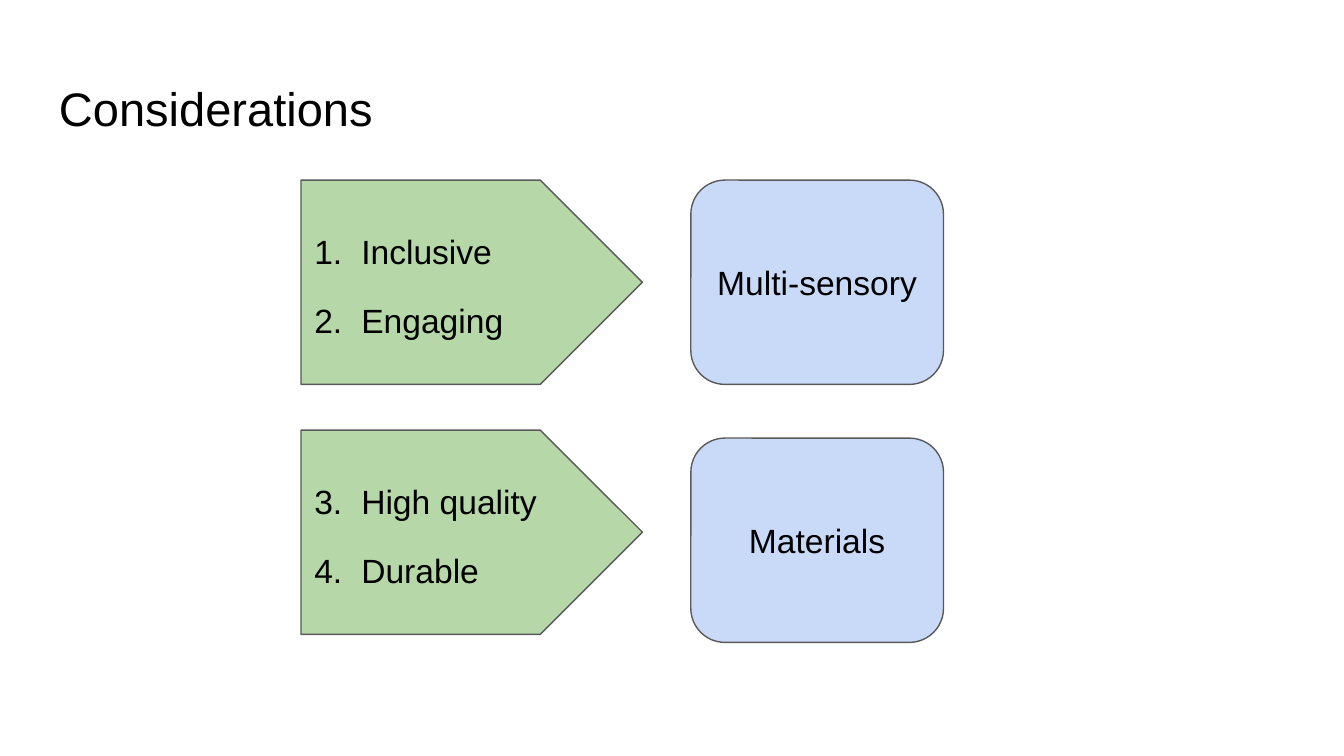
from pptx import Presentation, util as u
from pptx.dml.color import RGBColor
from pptx.enum import shapes, text

BLACK = RGBColor(0x00, 0x00, 0x00)
GRAY = RGBColor(0x59, 0x59, 0x59)
GREEN = RGBColor(0xB6, 0xD7, 0xA8)
BLUE = RGBColor(0xC9, 0xDA, 0xF8)

ARROW = shapes.MSO_SHAPE.PENTAGON
ROUNDED = shapes.MSO_SHAPE.ROUNDED_RECTANGLE
LIST_FORMAT = {"alignment": text.PP_ALIGN.LEFT, "line_spacing": 1.15}
LABEL_FORMAT = {"alignment": text.PP_ALIGN.CENTER}
HANGING = u.Inches(0.35)
PAGE_WIDTH = u.Inches(10)
PAGE_HEIGHT = PAGE_WIDTH * 9 // 16  # widescreen


def apply(target, values):
    for name, value in values.items():
        setattr(target, name, value)


class PageBuilder:
    font_name = "Arial"
    margin = u.Inches(0.1)

    def __init__(self, page):
        self.page = page

    def fill_text(self, box, lines, size, anchor, para_format):
        frame = box.text_frame
        apply(frame, {"word_wrap": True, "vertical_anchor": anchor,
                      "margin_left": self.margin, "margin_right": self.margin,
                      "margin_top": self.margin, "margin_bottom": self.margin})
        for index, line in enumerate(lines):
            para = frame.add_paragraph() if index else frame.paragraphs[0]
            apply(para, para_format)
            if index:
                apply(para, {"space_before": u.Pt(12), "space_after": u.Pt(12)})
            if "\t" in line:
                # Hanging indent aligns the words after the number
                props = para._p.get_or_add_pPr()
                props.set("marL", str(HANGING))
                props.set("indent", str(-HANGING))
            span = para.add_run()
            span.text = line
            apply(span.font, {"name": self.font_name, "size": u.Pt(size)})
            span.font.color.rgb = BLACK

    def title(self, words, left, top, width, height):
        box = self.page.shapes.add_textbox(*map(u.Inches, (left, top, width, height)))
        self.fill_text(box, [words], 25.2, text.MSO_ANCHOR.TOP, {})

    def block(self, kind, color, lines, para_format, left, top, width, height):
        box = self.page.shapes.add_shape(kind, *map(u.Inches, (left, top, width, height)))
        box.shadow.inherit = False
        box.fill.solid()
        box.fill.fore_color.rgb = color
        box.line.color.rgb = GRAY
        box.line.width = u.Pt(0.75)
        self.fill_text(box, lines, 18, text.MSO_ANCHOR.MIDDLE, para_format)


def main():
    deck = Presentation()
    apply(deck, {"slide_width": PAGE_WIDTH, "slide_height": PAGE_HEIGHT})
    builder = PageBuilder(deck.slides.add_slide(deck.slide_layouts[6]))

    # Heading
    builder.title("Considerations", 0.34, 0.49, 9.32, 0.63)

    # Each row: arrow top, numbered qualities, label top, label
    rows = [
        (1.34, ["1.\tInclusive", "2.\tEngaging"], 1.34, "Multi-sensory"),
        (3.2, ["3.\tHigh quality", "4.\tDurable"], 3.26, "Materials"),
    ]
    for arrow_top, qualities, label_top, label in rows:
        builder.block(ARROW, GREEN, qualities, LIST_FORMAT, 2.24, arrow_top, 2.54, 1.52)
        builder.block(ROUNDED, BLUE, [label], LABEL_FORMAT, 5.14, label_top, 1.88, 1.52)

    deck.save("out.pptx")


if __name__ == "__main__":
    main()
